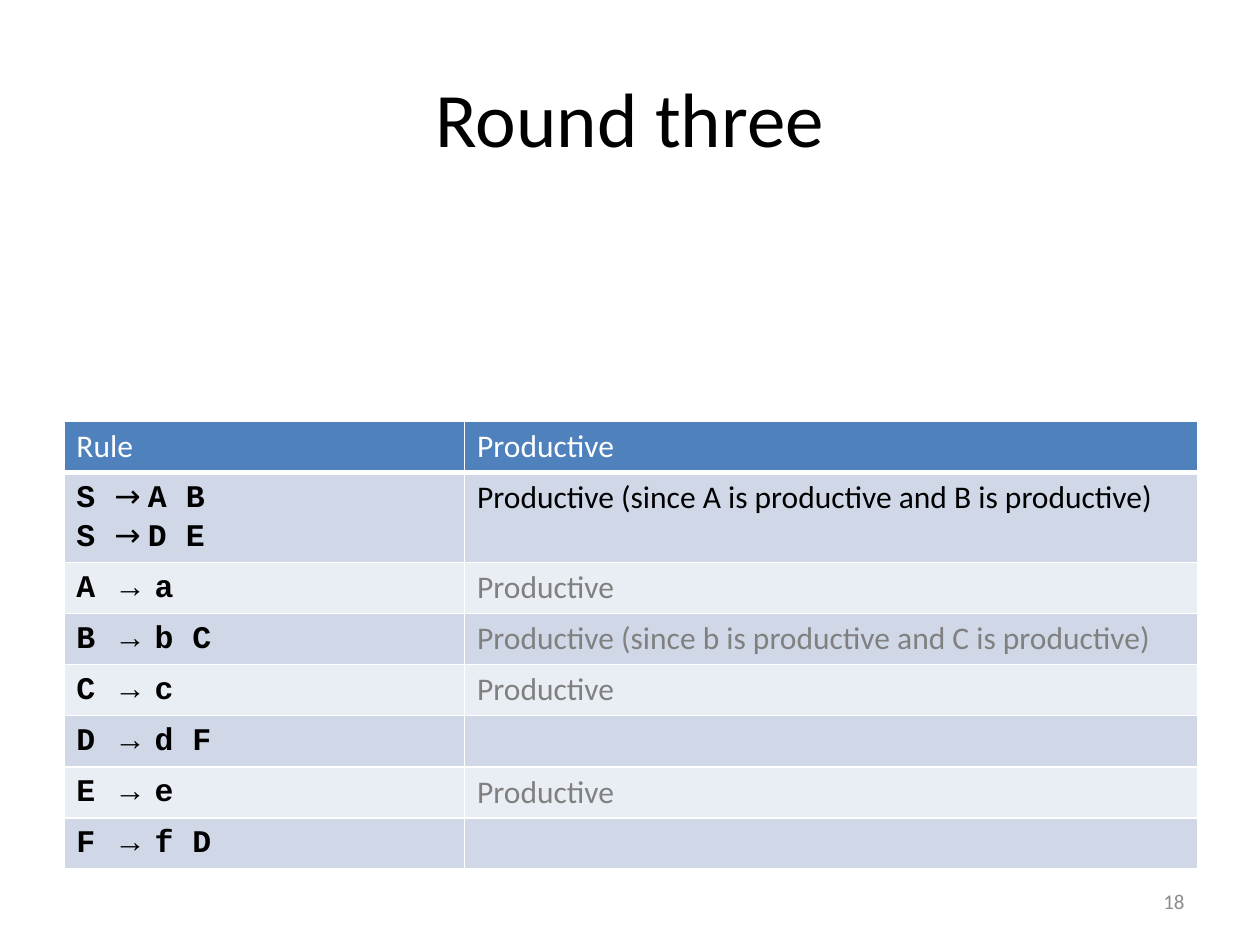
from dataclasses import dataclass

from lxml import etree
from pptx import Presentation
from pptx import util as u
from pptx.dml import color
from pptx.enum import text
from pptx.oxml import ns

COLORS = {
    "black": "000000",
    "white": "FFFFFF",
    "header": "4F81BD",
    "odd": "D0D8E8",
    "even": "E9EDF4",
    "earlier": "808080",
    "number": "8C8C8C",
}
CODE_FONT = "Courier New"
BODY_FONT = "Calibri"
COLUMN_WIDTHS = (229, 419)
ROW_HEIGHT = 29.2
DOUBLE_ROW_HEIGHT = 51.4


@dataclass(frozen=True)
class Rule:
    symbol: str
    expansions: tuple[str, ...]
    status: str = ""
    status_color: str = "earlier"
    arrow_font: str = "Arial"


RULES = (
    Rule("S", ("A B", "D E"), "Productive (since A is productive and B is productive)",
         "black", "Roboto Condensed"),
    Rule("A", ("a",), "Productive"),
    Rule("B", ("b C",), "Productive (since b is productive and C is productive)"),
    Rule("C", ("c",), "Productive"),
    Rule("D", ("d F",)),
    Rule("E", ("e",), "Productive"),
    Rule("F", ("f D",)),
)


def rgb(name: str) -> color.RGBColor:
    return color.RGBColor.from_string(COLORS[name])


def add_run(paragraph, content: str, color_name: str = "black", size: float = 18,
            font_name: str = BODY_FONT, bold: bool = False) -> None:
    run = paragraph.add_run()
    run.text = content
    formats = {"name": font_name, "size": u.Pt(size), "bold": bold}
    for attribute, value in formats.items():
        setattr(run.font, attribute, value)
    run.font.color.rgb = rgb(color_name)


def format_cell(cell, fill_name: str, bottom_width: float = 1) -> None:
    cell.fill.solid()
    cell.fill.fore_color.rgb = rgb(fill_name)
    properties = cell._tc.get_or_add_tcPr()
    widths = {"lnL": 1, "lnR": 1, "lnT": 1, "lnB": bottom_width}
    for index, (tag, width) in enumerate(widths.items()):
        line = etree.Element(ns.qn(f"a:{tag}"), w=str(u.Pt(width)))
        fill = etree.SubElement(line, ns.qn("a:solidFill"))
        etree.SubElement(fill, ns.qn("a:srgbClr"), val=COLORS["white"])
        properties.insert(index, line)


def write_rule(text_frame, rule: Rule) -> None:
    for index, expansion in enumerate(rule.expansions):
        paragraph = text_frame.add_paragraph() if index else text_frame.paragraphs[0]
        add_run(paragraph, f"{rule.symbol} ", font_name=CODE_FONT, bold=True)
        add_run(paragraph, "→ ", font_name=rule.arrow_font)
        add_run(paragraph, expansion, font_name=CODE_FONT, bold=True)


def add_rule_table(slide, rules: tuple[Rule, ...]) -> None:
    heights = [ROW_HEIGHT] + [
        DOUBLE_ROW_HEIGHT if len(rule.expansions) > 1 else ROW_HEIGHT for rule in rules
    ]
    table = slide.shapes.add_table(
        len(heights), len(COLUMN_WIDTHS), u.Pt(36.5), u.Pt(240.8),
        u.Pt(sum(COLUMN_WIDTHS)), u.Pt(sum(heights)),
    ).table
    for column, width in zip(table.columns, COLUMN_WIDTHS):
        column.width = u.Pt(width)
    for row, height in zip(table.rows, heights):
        row.height = u.Pt(height)
    for cell, heading in zip(table.rows[0].cells, ("Rule", "Productive")):
        format_cell(cell, "header", bottom_width=3)
        add_run(cell.text_frame.paragraphs[0], heading, "white")
    for index, rule in enumerate(rules, start=1):
        rule_cell, status_cell = table.rows[index].cells
        for cell in (rule_cell, status_cell):
            format_cell(cell, "odd" if index % 2 else "even")
        write_rule(rule_cell.text_frame, rule)
        if rule.status:
            add_run(status_cell.text_frame.paragraphs[0], rule.status, rule.status_color)


def write_line(shape, content: str, alignment, color_name: str, size: float) -> None:
    frame = shape.text_frame
    formats = {"word_wrap": True, "vertical_anchor": text.MSO_ANCHOR.MIDDLE}
    for attribute, value in formats.items():
        setattr(frame, attribute, value)
    paragraph = frame.paragraphs[0]
    paragraph.alignment = alignment
    add_run(paragraph, content, color_name, size)


def main() -> None:
    presentation = Presentation()
    presentation.slide_width, presentation.slide_height = u.Pt(720), u.Pt(540)
    slide = presentation.slides.add_slide(presentation.slide_layouts.get_by_name("Title Only"))

    title = slide.shapes.title
    position = {"left": 36, "top": 21.6, "width": 648, "height": 90}
    for attribute, value in position.items():
        setattr(title, attribute, u.Pt(value))
    write_line(title, "Round three", text.PP_ALIGN.CENTER, "black", 44)

    add_rule_table(slide, RULES)

    number = slide.shapes.add_textbox(u.Pt(516), u.Pt(500.5), u.Pt(168), u.Pt(28.8))
    write_line(number, "18", text.PP_ALIGN.RIGHT, "number", 12)

    presentation.save("out.pptx")


if __name__ == "__main__":
    main()
